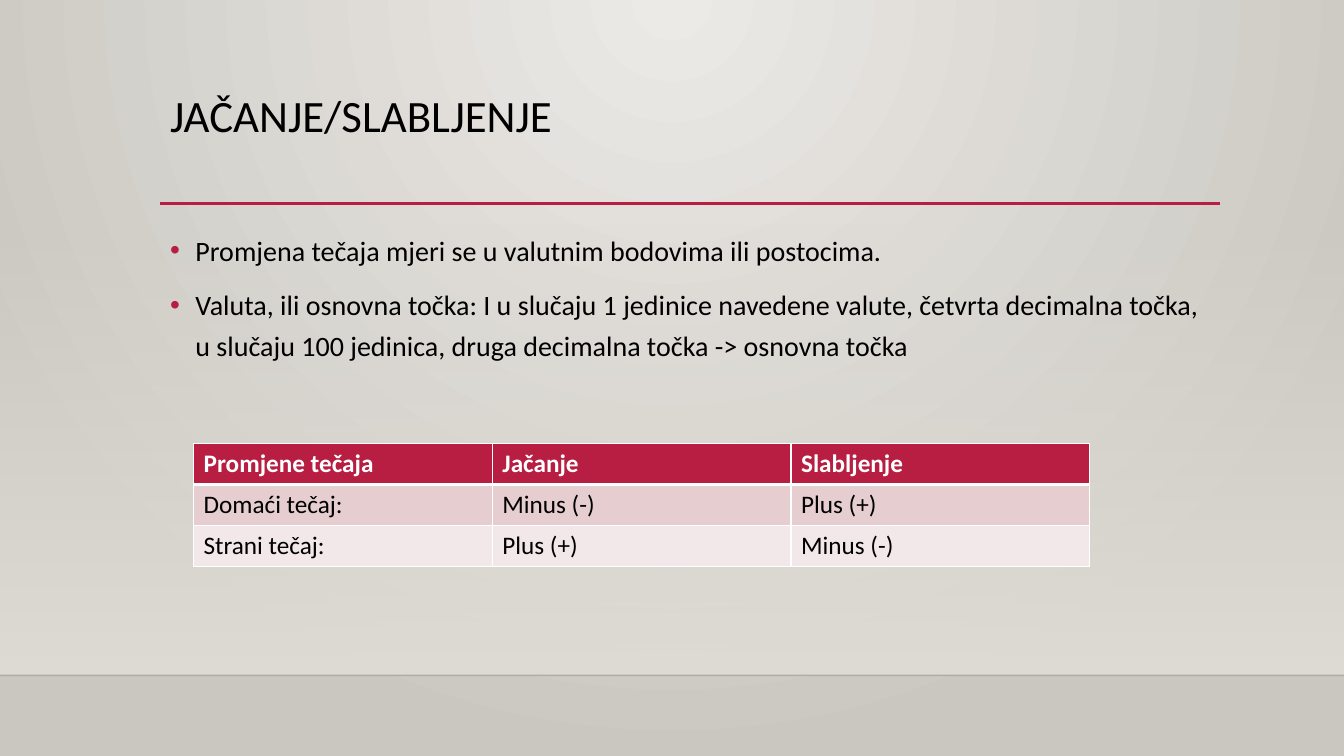
from lxml.etree import SubElement as Sub
from pptx import Presentation
from pptx.dml.color import RGBColor
from pptx.enum.shapes import MSO_CONNECTOR as Link, MSO_SHAPE as Shape
from pptx.enum.text import MSO_ANCHOR as Anchor
from pptx.oxml.ns import qn
from pptx.util import Inches, Pt

RED = RGBColor(0xB7, 0x1E, 0x42)
ROSE = RGBColor(0xE6, 0xCD, 0xCF)
PALE = RGBColor(0xF3, 0xE8, 0xE9)
BLACK = RGBColor(0, 0, 0)
INK = RGBColor(0, 0, 1)
WHITE = RGBColor(0xFF, 0xFF, 0xFF)
LIGHT = RGBColor(0xEC, 0xEA, 0xE7)
GREY = RGBColor(0xCA, 0xC7, 0xC1)
SAND = RGBColor(0xDF, 0xDB, 0xD5)

TITLE = "JAČANJE/SLABLJENJE"
POINTS = [
    "Promjena tečaja mjeri se u valutnim bodovima ili postocima.",
    "Valuta, ili osnovna točka: I u slučaju 1 jedinice navedene valute, "
    "četvrta decimalna točka, u slučaju 100 jedinica, druga decimalna "
    "točka -> osnovna točka",
]
RATES = [
    ["Promjene tečaja", "Jačanje", "Slabljenje"],
    ["Domaći tečaj:", "Minus (-)", "Plus (+)"],
    ["Strani tečaj:", "Plus (+)", "Minus (-)"],
]


def fade(color, share):
    Sub(color, qn("a:alpha"), val=str(share * 1000))


class Page:
    face = "Calibri"

    def __init__(self, slide):
        self.slide = slide
        self.shapes = slide.shapes

    def font(self, para, size, color, bold=False):
        font = para.font
        font.name, font.size, font.bold = self.face, Pt(size), bold
        font.color.rgb = color

    def blend(self, fill, first, last):
        fill.gradient()
        for stop, color in zip(fill.gradient_stops, (first, last)):
            stop.color.rgb = color

    def back(self, inner, outer):
        self.blend(self.slide.background.fill, inner, outer)
        grad = next(self.slide.element.iter(qn("a:gradFill")))
        grad.remove(grad.find(qn("a:lin")))
        glow = Sub(grad, qn("a:path"), path="circle")
        Sub(glow, qn("a:fillToRect"), l="43000", t="0", r="43000", b="100000")

    def veil(self, box, color):
        rect = self.shapes.add_shape(Shape.RECTANGLE, *map(Inches, box))
        rect.shadow.inherit = False
        rect.line.fill.background()
        self.blend(rect.fill, color, color)
        rect.fill.gradient_angle = 270
        fade(next(rect.element.spPr.iter(qn("a:srgbClr"))), 0)

    def rule(self, left, right, top, color, width, share=100):
        ends = map(Inches, (left, top, right, top))
        line = self.shapes.add_connector(Link.STRAIGHT, *ends)
        line.line.color.rgb = color
        line.line.width = Pt(width)
        props = line.element.spPr
        if share < 100:
            fade(next(props.iter(qn("a:srgbClr"))), share)
        Sub(props, qn("a:effectLst"))

    def text(self, box, lines, size, space, bullet=False):
        frame = self.shapes.add_textbox(*map(Inches, box)).text_frame
        frame.word_wrap = True
        frame.vertical_anchor = Anchor.TOP
        for spot, line in enumerate(lines):
            para = frame.add_paragraph() if spot else frame.paragraphs[0]
            para.text = line
            para.line_spacing = space
            if spot:
                para.space_before = Pt(10)
            if bullet:
                self.dot(para)
            self.font(para, size, BLACK)

    def dot(self, para):
        props = para._p.get_or_add_pPr()
        props.set("marL", str(Inches(0.25)))
        props.set("indent", str(Inches(-0.25)))
        Sub(Sub(props, qn("a:buClr")), qn("a:srgbClr"), val=str(RED))
        Sub(props, qn("a:buFont"), typeface="Arial")
        Sub(props, qn("a:buChar"), char="•")

    def edge(self, cell, row):
        props = cell._tc.get_or_add_tcPr()
        wide = {"T": row == 1, "B": row == 0}
        for side in "LRTB":
            width = Pt(3 if wide.get(side) else 1)
            line = Sub(props, qn(f"a:ln{side}"), w=str(width))
            Sub(Sub(line, qn("a:solidFill")), qn("a:srgbClr"), val=str(WHITE))

    def table(self, box, data, fills):
        size = len(data), len(data[0])
        grid = self.shapes.add_table(*size, *map(Inches, box)).table
        for row, (words, fill) in enumerate(zip(data, fills)):
            head = row == 0
            for col, word in enumerate(words):
                cell = grid.cell(row, col)
                cell.text = word
                self.edge(cell, row)
                cell.fill.solid()
                cell.fill.fore_color.rgb = fill
                para = cell.text_frame.paragraphs[0]
                self.font(para, 18, WHITE if head else BLACK, head)


def main():
    deck = Presentation()
    deck.slide_width, deck.slide_height = Inches(13.33), Inches(7.5)
    page = Page(deck.slides.add_slide(deck.slide_layouts[6]))
    page.back(LIGHT, GREY)
    page.veil((0, 2.21, 13.33, 4.49), SAND)
    page.rule(0, 13.33, 6.7, INK, 1, 20)
    page.rule(1.59, 12.1, 2.02, RED, 2.5)
    page.text((1.59, 0.88, 10.5, 1.15), [TITLE], 32, 0.9)
    page.text((1.59, 2.2, 10.5, 3.77), POINTS, 20, 1.2, True)
    page.table((1.92, 4.4, 8.89, 1.22), RATES, (RED, ROSE, PALE))
    deck.save("out.pptx")


if __name__ == "__main__":
    main()
